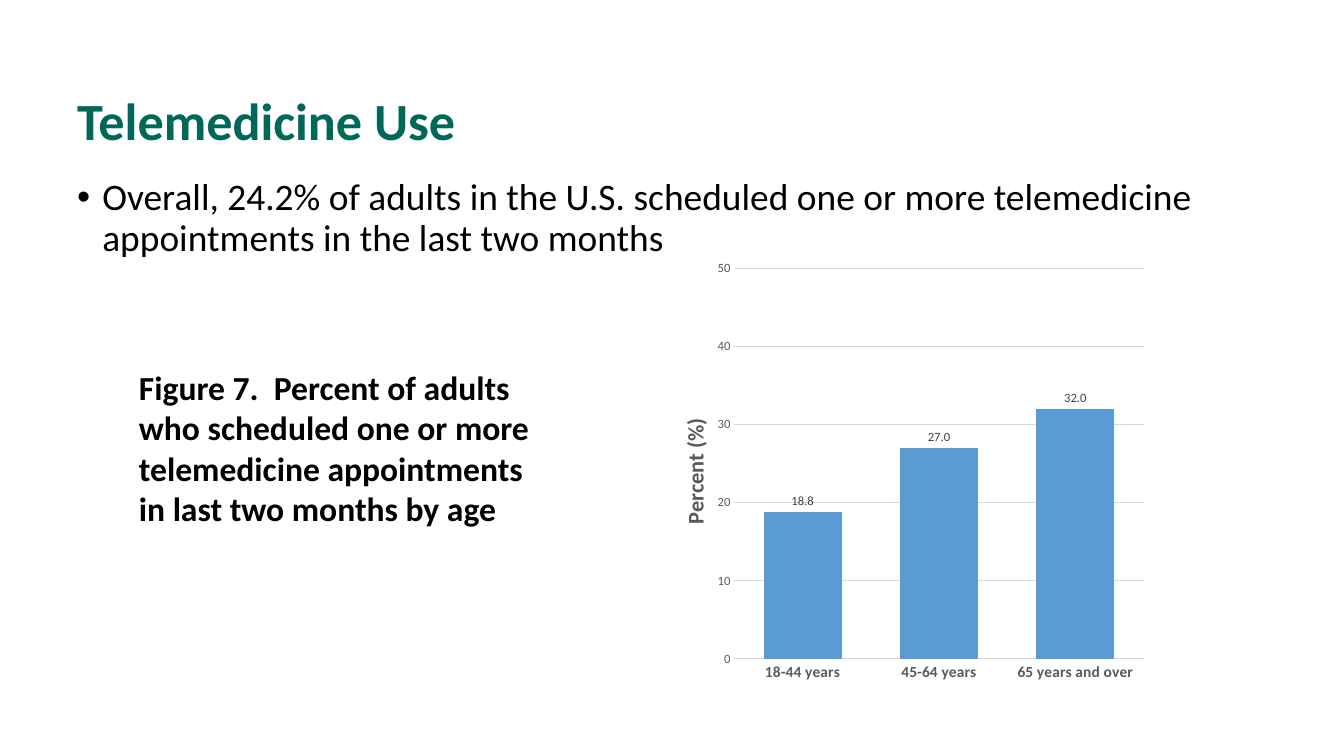
from lxml.etree import SubElement
from pptx import Presentation
from pptx.chart.data import CategoryChartData
from pptx.dml.color import RGBColor
from pptx.enum.chart import XL_CHART_TYPE, XL_LABEL_POSITION, XL_TICK_MARK
from pptx.enum.text import MSO_ANCHOR
from pptx.oxml import parse_xml
from pptx.oxml.ns import nsdecls, qn
from pptx.util import Inches, Pt

HUES = {
    "head": "006858",
    "text": "000000",
    "axis": "595959",
    "label": "404040",
    "grid": "D9D9D9",
    "bar": "5B9BD5",
}
COLS, ROWS = 40, 30


class Deck:
    face = "Calibri"

    def __init__(self):
        self.prs = Presentation()
        self.prs.slide_width = Inches(13.33)
        self.prs.slide_height = Inches(7.5)
        self.slide = self.prs.slides.add_slide(self.prs.slide_layouts[6])

    def area(self, col, row, wide, high):
        x = self.prs.slide_width / COLS
        y = self.prs.slide_height / ROWS
        return [int(n) for n in (col * x, row * y, wide * x, high * y)]

    def tint(self, hue):
        return RGBColor.from_string(HUES[hue])

    def style(self, font, size, hue, bold=False):
        font.name = self.face
        font.size = Pt(size)
        font.bold = bold
        font.color.rgb = self.tint(hue)

    def line(self, form):
        form.line.color.rgb = self.tint("grid")
        form.line.width = Pt(0.75)

    def text(self, words, spot, size, hue="text", bold=False, anchor=MSO_ANCHOR.TOP):
        frame = self.slide.shapes.add_textbox(*self.area(*spot)).text_frame
        frame.word_wrap = True
        frame.vertical_anchor = anchor
        frame.text = words
        para = frame.paragraphs[0]
        self.style(para.runs[0].font, size, hue, bold)
        return para

    def bullet(self, words, spot, size):
        para = self.text(words, spot, size)
        para.line_spacing = 0.9
        para.space_before = Pt(10)
        props = para._p.get_or_add_pPr()
        props.set("marL", str(Inches(0.25)))
        props.set("indent", str(-Inches(0.25)))
        SubElement(props, qn("a:buFont"), typeface="Arial")
        SubElement(props, qn("a:buChar"), char="•")

    def place(self, node, index, **marks):
        for old in node.findall(qn("c:layout")):
            node.remove(old)
        items = "".join(f'<c:{key} val="{val}"/>' for key, val in marks.items())
        node.insert(index, parse_xml(
            f'<c:layout {nsdecls("c")}><c:manualLayout>{items}</c:manualLayout></c:layout>'))

    def chart(self, cats, vals, spot):
        data = CategoryChartData(number_format="0.0")
        data.categories = cats
        data.add_series("Series 1", vals)
        chart = self.slide.shapes.add_chart(
            XL_CHART_TYPE.COLUMN_CLUSTERED, *self.area(*spot), data).chart
        chart.has_legend = chart.has_title = False
        self.style(chart.font, 10, "text")
        self.bars(chart.plots[0])
        self.axes(chart.category_axis, chart.value_axis)
        self.place(chart.element.find(".//" + qn("c:plotArea")), 0,
                   layoutTarget="inner", xMode="edge", yMode="edge",
                   x=0.158, y=0.087, w=0.827, h=0.81)

    def bars(self, plot):
        plot.vary_by_categories = False
        plot.gap_width = 75
        plot.overlap = -27
        fill = plot.series[0].format.fill
        fill.solid()
        fill.fore_color.rgb = self.tint("bar")
        plot.has_data_labels = True
        labels = plot.data_labels
        labels.show_value = True
        labels.number_format = "0.0"
        labels.number_format_is_linked = False
        labels.position = XL_LABEL_POSITION.OUTSIDE_END
        self.style(labels.font, 9, "label")

    def axes(self, base, scale):
        for axis in (base, scale):
            axis.major_tick_mark = axis.minor_tick_mark = XL_TICK_MARK.NONE
        self.style(base.tick_labels.font, 11, "axis", True)
        self.style(scale.tick_labels.font, 9, "axis")
        self.line(base.format)
        scale.format.line.fill.background()
        scale.minimum_scale, scale.maximum_scale = 0, 50
        scale.major_unit = 10
        scale.tick_labels.number_format = "0"
        scale.tick_labels.number_format_is_linked = False
        self.line(scale.major_gridlines.format)
        title = scale.axis_title
        title.text_frame.text = "Percent (%)"
        self.style(title.text_frame.paragraphs[0].runs[0].font, 16, "axis", True)
        node = title.element
        node.find(".//" + qn("a:bodyPr")).set("rot", "-5400000")
        self.place(node, 1, xMode="edge", yMode="edge", x=0.04, y=0.39)


def main():
    deck = Deck()
    title = deck.text("Telemedicine Use", (2, 1.2, 36, 5), 37.3, "head", True,
                      MSO_ANCHOR.BOTTOM)
    title.line_spacing = Pt(40)
    deck.bullet("Overall, 24.2% of adults in the U.S. scheduled one or more "
                "telemedicine appointments in the last two months",
                (2, 6.88, 36, 18.36), 26.7)
    deck.chart(("18-44 years", "45-64 years", "65 years and over"),
               (18.8, 27.0, 32.0), (19.53, 9, 14.73, 19.12))
    deck.text("Figure 7.  Percent of adults who scheduled one or more "
              "telemedicine appointments in last two months by age",
              (3.84, 14.36, 12.93, 6.88), 24, bold=True)
    deck.prs.save("out.pptx")


if __name__ == "__main__":
    main()
